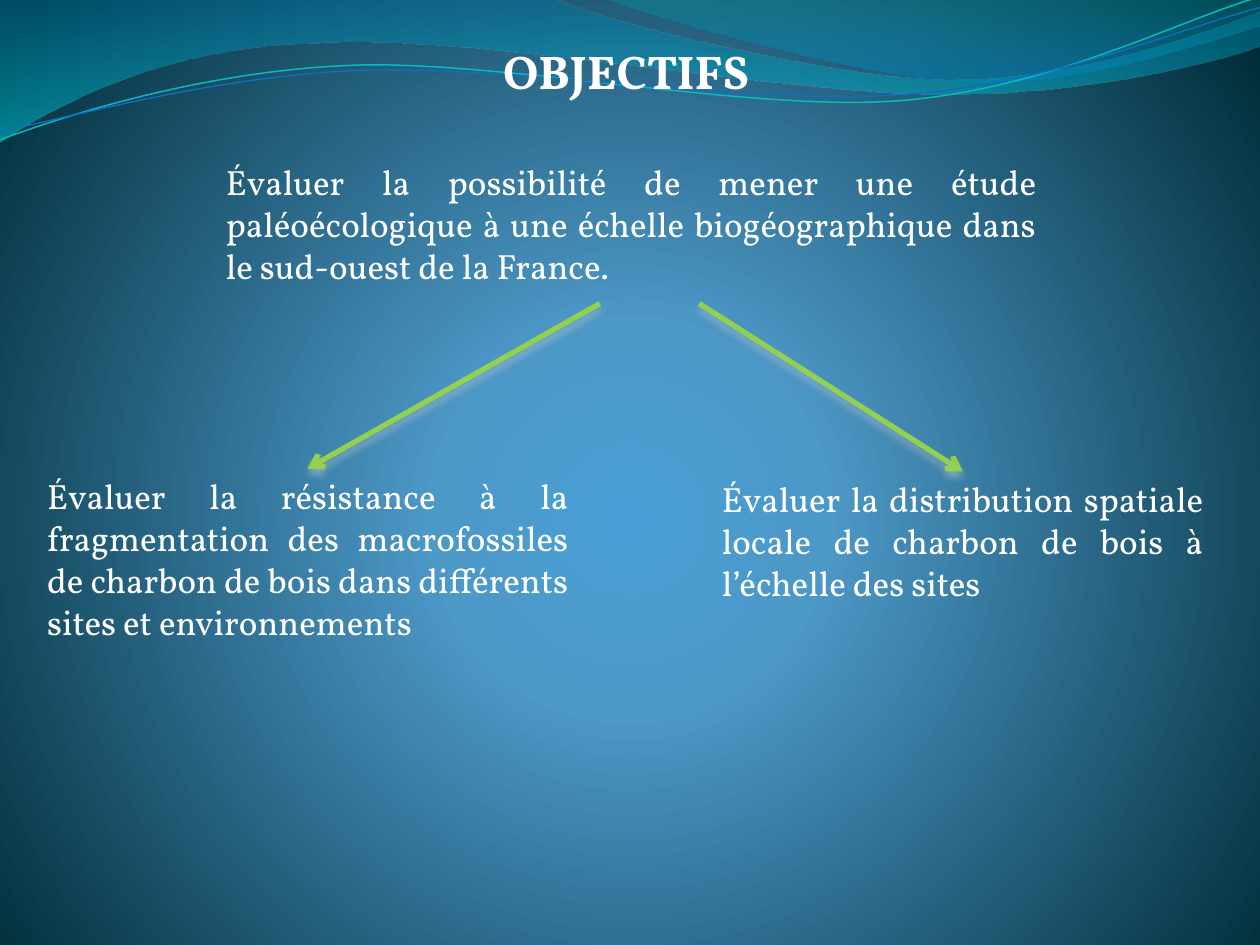
from lxml.etree import SubElement as Sub, Element as Elem
from pptx import Presentation
from pptx.dml.color import RGBColor as RGB
from pptx.enum.shapes import MSO_CONNECTOR as CONN
from pptx.enum.text import MSO_AUTO_SIZE as AUTO, PP_ALIGN as AL
from pptx.oxml.ns import qn
from pptx.util import Pt

THEME = {
    "font": "Vollkorn", "title": 27, "body": 20,
    "text": "FFFFFF", "arrow": "92D050", "shade": "D0D0D0",
    "back": [(0, "4AA0D6", 100), (25, "4C98C7", 100), (100, "002C38", 100)],
    "left": [(0, "0074A1", 45), (100, "00C6CF", 55)],
    "right": [(0, "00A1A9", 30), (80, "008BBF", 45)],
    "teal": "0AB8BF", "blue": "0F6FC6",
}

BANDS = [
    ("left", [(0, 0), (316.8, -0.7),
              (342.7, 12.2, 478.1, 45.4, 545.8, 45.4),
              (614.2, 45.4, 689.8, 18.7, 720, 6.5), (720.7, 25.9),
              (707.8, 31.7, 626.4, 54.7, 537.1, 54),
              (447.8, 54, 275, 20.2, 185, 24.5),
              (92.9, 25.9, 33.1, 59.8, -0.7, 81.4)]),
    ("right", [(344.9, -0.7), (366.5, 7.9, 491, 44.6, 553.7, 46.8),
               (616.3, 49.7, 691.9, 23, 720, 15.1), (720, 0)]),
]
WAVES = [
    ("teal", 0.85, [(0, 79.9), (34.6, 67, 113.8, 41, 199.4, 37.4),
                    (284.4, 33.8, 427, 64.1, 513.4, 57.6),
                    (599.8, 51.1, 675.4, 10.8, 718.6, -1.4)]),
    ("blue", 0.75, [(0, 74.9), (33.8, 69.1, 118.1, 43.9, 203.8, 40.3),
                    (290.2, 36.7, 429.8, 60.5, 516.2, 54),
                    (601.9, 48.2, 677.5, 15.1, 720, 4.3)]),
]
TITLE = ("OBJECTIFS", (280.4, 20.9, 156.2, 40.3))
GOALS = [
    ("Évaluer la possibilité de mener une étude paléoécologique à une échelle "
     "biogéographique dans le sud-ouest de la France.",
     (122, 88.2, 477.4, 79.9)),
    ("Évaluer la résistance à la fragmentation des macrofossiles de charbon "
     "de bois dans différents sites et environnements",
     (19.8, 267.8, 312.2, 104.4)),
    ("Évaluer la distribution spatiale locale de charbon de bois à l’échelle "
     "des sites", (405.4, 269.5, 289.4, 79.9)),
]
ARROWS = [(399.6, 173.5, 550.1, 269.3), (342.7, 173.5, 175.7, 267.8)]


def tint(node, color, alpha):
    clr = Sub(node, qn("a:srgbClr"), val=color)
    if alpha < 100:
        Sub(clr, qn("a:alpha"), val=str(alpha * 1000))


def blend(node, stops, round_=False):
    grad = Elem(qn("a:gradFill"), rotWithShape="1")
    items = Sub(grad, qn("a:gsLst"))
    for pos, color, alpha in stops:
        tint(Sub(items, qn("a:gs"), pos=str(pos * 1000)), color, alpha)
    if round_:
        ring = Sub(grad, qn("a:path"), path="circle")
        Sub(ring, qn("a:fillToRect"), l="10000", t="110000", r="10000", b="100000")
    else:
        Sub(grad, qn("a:lin"), ang="5400000", scaled="1")
    old = next(node.iter(qn("a:solidFill")))
    old.getparent().replace(old, grad)


def draw(slide, parts, close):
    first, *rest = [(Pt(part[-2]), Pt(part[-1])) for part in parts]
    pen = slide.shapes.build_freeform(*first)
    pen.add_line_segments(rest, close=close)
    shape = pen.convert_to_shape()
    shape.shadow.inherit = False
    for part, edge in zip(parts[1:], list(shape.element.iter(qn("a:lnTo")))):
        if len(part) == 6:
            curve = Elem(qn("a:cubicBezTo"))
            for x, y in zip(part[::2], part[1::2]):
                Sub(curve, qn("a:pt"), x=str(Pt(x) - shape.left),
                    y=str(Pt(y) - shape.top))
            edge.getparent().replace(edge, curve)
    return shape


def write(slide, text, box, size, bold=False, align=AL.LEFT, wrap=True):
    frame = slide.shapes.add_textbox(*map(Pt, box)).text_frame
    frame.word_wrap = wrap
    frame.auto_size = AUTO.SHAPE_TO_FIT_TEXT
    para = frame.paragraphs[0]
    para.alignment = align
    run = para.add_run()
    run.text = text
    font = run.font
    font.name, font.size, font.bold = THEME["font"], Pt(size), bold
    font.color.rgb = RGB.from_string(THEME["text"])


def ink(line, color, width):
    line.color.rgb = RGB.from_string(color)
    line.width = Pt(width)


def point(slide, ends):
    arrow = slide.shapes.add_connector(CONN.STRAIGHT, *map(Pt, ends))
    ink(arrow.line, THEME["arrow"], 3)
    props = arrow.element.spPr
    Sub(props.find(qn("a:ln")), qn("a:tailEnd"), type="arrow")
    glow = Sub(Sub(props, qn("a:effectLst")), qn("a:outerShdw"),
               blurRad=str(Pt(4.5)), dist=str(Pt(3)), dir="5400000",
               rotWithShape="0")
    tint(glow, THEME["shade"], 48)


def main():
    deck = Presentation()
    deck.slide_width, deck.slide_height = Pt(720), Pt(540)
    slide = deck.slides.add_slide(deck.slide_layouts[6])
    slide.background.fill.solid()
    slide.background.fill.fore_color.rgb = RGB.from_string(THEME["back"][0][1])
    blend(slide.element, THEME["back"], round_=True)

    for key, parts in BANDS:
        band = draw(slide, parts, True)
        band.line.fill.background()
        band.fill.solid()
        blend(band.element, THEME[key])
    for key, width, parts in WAVES:
        wave = draw(slide, parts, False)
        wave.fill.background()
        ink(wave.line, THEME[key], width)

    write(slide, *TITLE, THEME["title"], bold=True, wrap=False)
    for text, box in GOALS:
        write(slide, text, box, THEME["body"], align=AL.JUSTIFY)
    for ends in ARROWS:
        point(slide, ends)
    deck.save("out.pptx")


if __name__ == "__main__":
    main()
